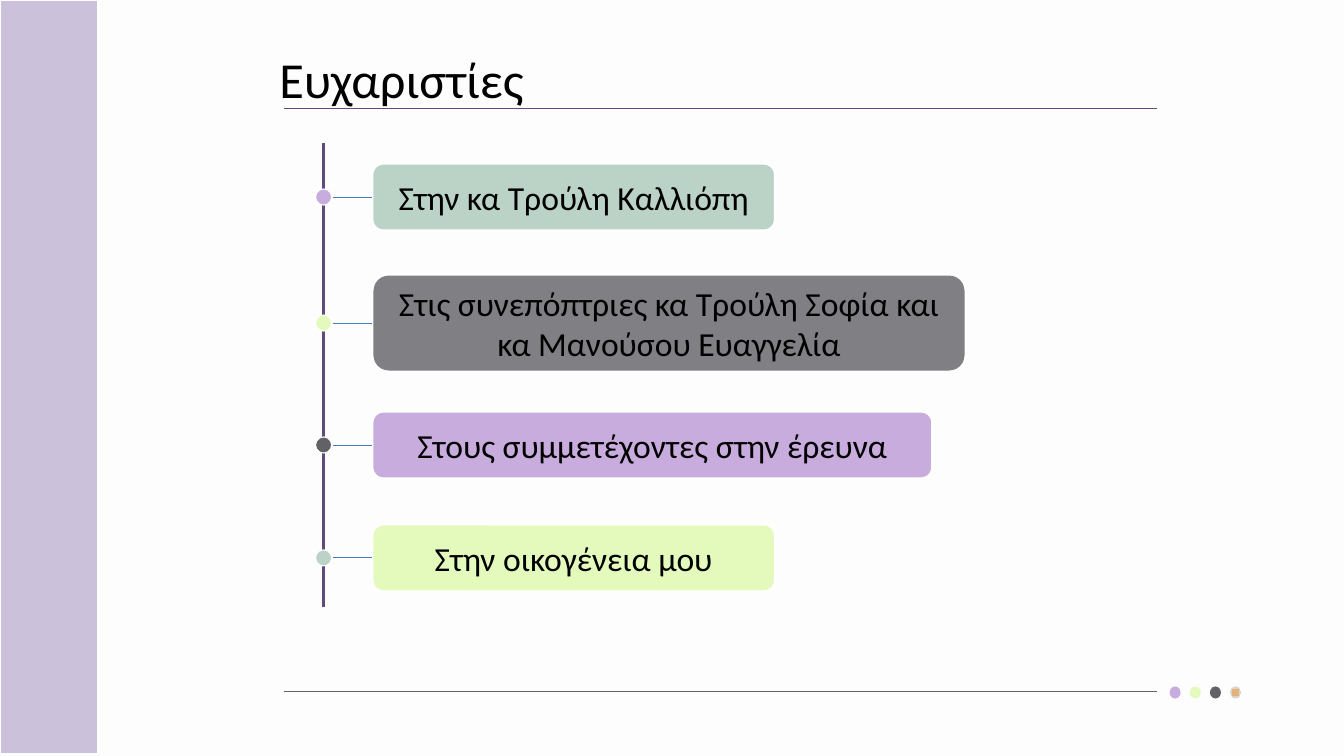
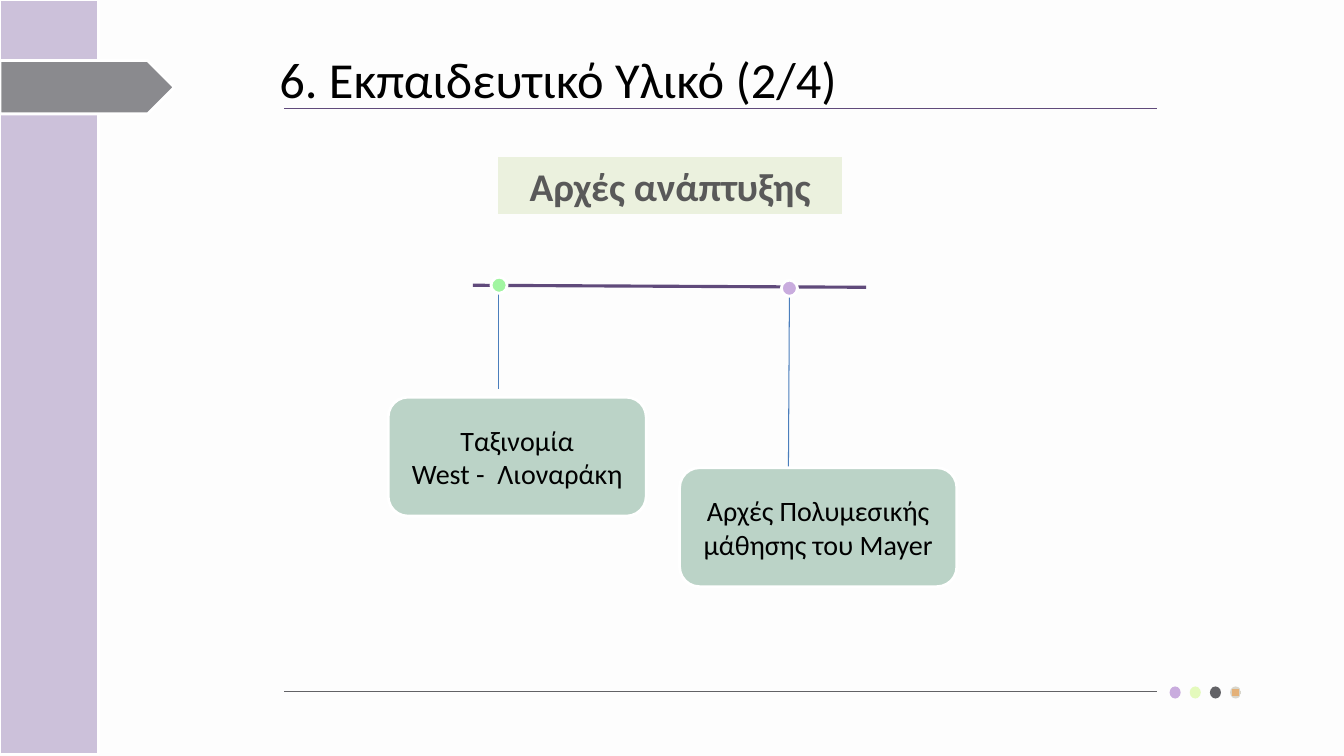
from pptx import Presentation
from pptx.dml.color import RGBColor
from pptx.enum.shapes import MSO_CONNECTOR, MSO_SHAPE
from pptx.enum.text import MSO_ANCHOR, PP_ALIGN
from pptx.oxml import parse_xml
from pptx.oxml.ns import nsdecls, qn
from pptx.util import Inches, Pt

WHITE, BLACK, BLUE = "FFFFFF", "000000", "4B7EBC"
LILAC, LIME, GREY, SAGE = "C9ACDE", "E4FABC", "626266", "BBD3C7"
PURPLE, BAND = "604A7B", "CCC1DA"
DOT = 0.16
TITLE = {"name": "Calibri", "size": Pt(36), "bold": False}
BODY = {"name": "Calibri", "size": Pt(24), "bold": False}
SMALL = {**BODY, "size": Pt(20)}
HEADING = {**BODY, "size": Pt(28), "bold": True}
rgb = RGBColor.from_string


def add_box(shapes, kind, box, fill, line=0, text="", fmt=BODY, color=BLACK):
    sp = shapes.add_shape(kind, *[Inches(v) for v in box])
    sp.shadow.inherit = False
    sp.fill.solid()
    sp.fill.fore_color.rgb = rgb(fill)
    if line:
        sp.line.color.rgb = rgb(WHITE)
        sp.line.width = Pt(line)
    else:
        sp.line.fill.background()
    if text:
        tf = sp.text_frame
        tf.word_wrap = True
        tf.vertical_anchor = MSO_ANCHOR.MIDDLE
        tf.text = text
        for p in tf.paragraphs:
            p.alignment = PP_ALIGN.CENTER
            p.font.color.rgb = rgb(color)
            for name, value in fmt.items():
                setattr(p.font, name, value)
    return sp


def add_line(s, start, end, color, width=0.75):
    ends = [Inches(v) for v in (*start, *end)]
    cxn = s.shapes.add_connector(MSO_CONNECTOR.STRAIGHT, *ends)
    cxn.line.color.rgb = rgb(color)
    cxn.line.width = Pt(width)
    cxn._element.spPr.append(parse_xml(f"<a:effectLst {nsdecls('a')}/>"))
    return cxn


prs = Presentation()
prs.slide_width, prs.slide_height = Inches(13.33), Inches(7.5)
bg = prs.slide_master.background.fill
bg.solid()
bg.fore_color.rgb = rgb("FDFDFD")

slides = []
for title in ("Ευχαριστίες", "6. Εκπαιδευτικό Υλικό (2/4)"):
    s = prs.slides.add_slide(prs.slide_layouts[5])
    slides.append(s)
    sp = s.shapes.title
    sp.left, sp.top, sp.width, sp.height = [Inches(v) for v in (2.67, 0.43, 8.64, 0.71)]
    tf = sp.text_frame
    tf.text = title
    tf.vertical_anchor = MSO_ANCHOR.TOP
    p = tf.paragraphs[0]
    p.alignment = PP_ALIGN.LEFT
    p.font.color.rgb = rgb(BLACK)
    for name, value in TITLE.items():
        setattr(p.font, name, value)

    add_box(s.shapes, MSO_SHAPE.RECTANGLE, (0, 0, 0.98, 7.48), BAND, 2)
    add_line(s, (2.82, 1.08), (11.48, 1.08), PURPLE)
    add_line(s, (2.82, 6.86), (11.48, 6.86), GREY, 1)

    dots = s.shapes.add_group_shape().shapes
    for i, color in enumerate((LILAC, LIME, GREY, "E4B178")):
        sp = add_box(dots, MSO_SHAPE.OVAL, (11.6 + 0.2 * i, 6.81, 0.11, 0.12), color)
    sp.fill.gradient()
    for stop, pos, color in zip(sp.fill.gradient_stops, (0.57, 0.62), ("E4B178", "D8D6CC")):
        stop.position = pos
        stop.color.rgb = rgb(color)
    grad = sp._element.spPr.find(qn("a:gradFill"))
    grad.replace(grad.find(qn("a:lin")), parse_xml(
        f'<a:path {nsdecls("a")} path="shape">'
        '<a:fillToRect l="50000" t="50000" r="50000" b="50000"/></a:path>'))

thanks, principles = slides

add_line(thanks, (3.21, 1.42), (3.21, 6.02), PURPLE, 2.25)
for top, width, height, fill, dot, text in (
    (1.62, 4, 0.67, SAGE, LILAC, "Στην κα Τρούλη Καλλιόπη"),
    (2.72, 5.89, 0.97, "808084", LIME,
     "Στις συνεπόπτριες κα Τρούλη Σοφία και κα Μανούσου Ευαγγελία"),
    (4.08, 5.56, 0.67, LILAC, GREY, "Στους συμμετέχοντες στην έρευνα"),
    (5.2, 4, 0.67, LIME, SAGE, "Στην οικογένεια μου"),
):
    mid = top + height / 2
    add_box(thanks.shapes, MSO_SHAPE.OVAL, (3.13, mid - DOT / 2, DOT, DOT), dot, 0.75)
    sp = add_box(thanks.shapes, MSO_SHAPE.ROUNDED_RECTANGLE,
                 (3.69, top, width, height), fill, 2, text)
    add_line(thanks, (3.3, mid), (3.69, mid), BLUE).end_connect(sp, 1)

add_box(principles.shapes, MSO_SHAPE.PENTAGON, (0, 0.6, 1.73, 0.53), "8A8A8E", 2)
add_box(principles.shapes, MSO_SHAPE.FLOWCHART_PROCESS, (4.94, 1.56, 3.41, 0.56),
        "EBF1DE", 0, "Αρχές ανάπτυξης", HEADING, "595959")
add_line(principles, (4.69, 2.83), (8.59, 2.85), PURPLE, 2.25)
for start, end, dot, color, box, text in (
    ((4.94, 2.85), (4.94, 3.86), (4.87, 2.75), "A1F5A1",
     (3.85, 3.94, 2.56, 1.18), "Ταξινομία\nWest -  Λιοναράκη"),
    ((7.83, 2.86), (7.82, 4.64), (7.75, 2.78), LILAC,
     (6.74, 4.64, 2.75, 1.18), "Αρχές Πολυμεσικής μάθησης του Mayer"),
):
    add_line(principles, start, end, BLUE)
    add_box(principles.shapes, MSO_SHAPE.OVAL, (*dot, DOT, DOT), color, 2)
    add_box(principles.shapes, MSO_SHAPE.ROUNDED_RECTANGLE, box, SAGE, 2, text, SMALL)

prs.save("out.pptx")
